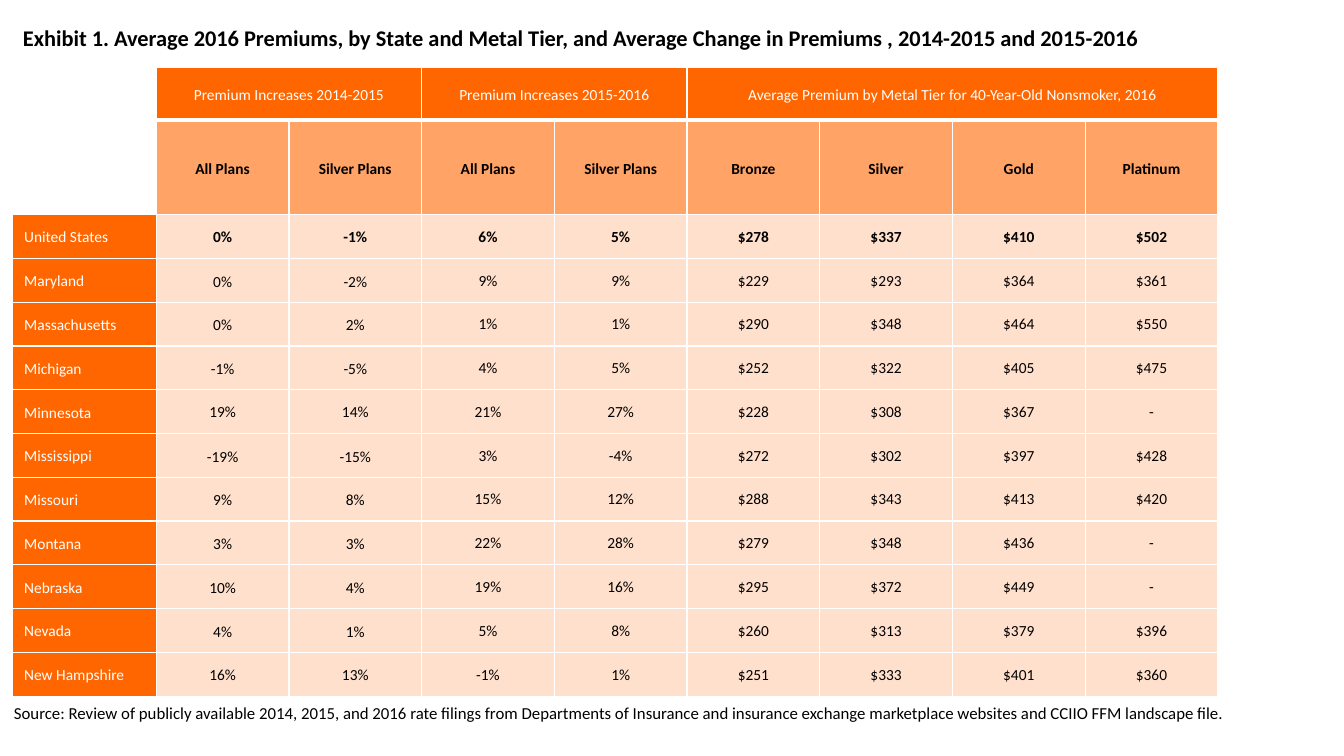
from lxml import etree
from pptx import Presentation
from pptx.dml.color import RGBColor
from pptx.enum.text import MSO_ANCHOR, PP_ALIGN
from pptx.oxml.ns import qn
from pptx.util import Inches, Pt

LEFT, CENTER = PP_ALIGN.LEFT, PP_ALIGN.CENTER
MIDDLE, TOP = MSO_ANCHOR.MIDDLE, MSO_ANCHOR.TOP
HEX = {"white": "FFFFFF", "black": "000000", "strong": "FF6600",
       "mid": "FFA366", "pale": "FFE0CC"}

GROUPS = [(1, 2, "Premium Increases 2014-2015"),
          (3, 4, "Premium Increases 2015-2016"),
          (5, 8, "Average Premium by Metal Tier for 40-Year-Old Nonsmoker, 2016")]
HEADS = ["All Plans", "Silver Plans"] * 2 + ["Bronze", "Silver", "Gold", "Platinum"]
STATES = [
    ("United States", "0% -1% 6% 5% $278 $337 $410 $502"),
    ("Maryland", "0% -2% 9% 9% $229 $293 $364 $361"),
    ("Massachusetts", "0% 2% 1% 1% $290 $348 $464 $550"),
    ("Michigan", "-1% -5% 4% 5% $252 $322 $405 $475"),
    ("Minnesota", "19% 14% 21% 27% $228 $308 $367 -"),
    ("Mississippi", "-19% -15% 3% -4% $272 $302 $397 $428"),
    ("Missouri", "9% 8% 15% 12% $288 $343 $413 $420"),
    ("Montana", "3% 3% 22% 28% $279 $348 $436 -"),
    ("Nebraska", "10% 4% 19% 16% $295 $372 $449 -"),
    ("Nevada", "4% 1% 5% 8% $260 $313 $379 $396"),
    ("New Hampshire", "16% 13% -1% 1% $251 $333 $401 $360"),
]
TIGHT = ("United States", "Minnesota")  # rows set in single line spacing


def write(frame, text, size=11, color="black", bold=False, align=CENTER,
          line=None, after=0):
    para = frame.paragraphs[0]
    para.alignment = align
    para.line_spacing = line
    para.space_after = Pt(after)
    run = para.add_run()
    run.text = text
    run.font.name = "Calibri"
    run.font.size = Pt(size)
    run.font.bold = bold
    run.font.color.rgb = RGBColor.from_string(HEX[color])


def pad(cell, side, top=0):
    cell.margin_left = cell.margin_right = Inches(side)
    cell.margin_top, cell.margin_bottom = Inches(top), 0
    cell.vertical_anchor = MIDDLE


deck = Presentation()
deck.slide_width, deck.slide_height = Inches(13.33), Inches(7.5)
slide = deck.slides.add_slide(deck.slide_layouts[6])

# Title and source line
for left, top, height, text, size, bold, anchor, line in [
    (0.13, 0.22, 0.34, "Exhibit 1. Average 2016 Premiums, by State and Metal Tier, "
     "and Average Change in Premiums , 2014-2015 and 2015-2016", 16, True, MIDDLE, 0.9),
    (0.04, 6.92, 0.5, "Source: Review of publicly available 2014, 2015, and 2016 rate "
     "filings from Departments of Insurance and insurance exchange marketplace "
     "websites and CCIIO FFM landscape file.", 12, False, TOP, None),
]:
    box = slide.shapes.add_textbox(Inches(left), Inches(top), Inches(13.07), Inches(height))
    box.text_frame.word_wrap = True
    box.text_frame.vertical_anchor = anchor
    write(box.text_frame, text, size=size, bold=bold, align=LEFT, line=line)

# Table grid: a name column and eight equal ones, two head rows and equal state rows
wide, high = Inches(11.96), Inches(6.24)
name, band, head = Inches(1.43), Inches(0.52), Inches(0.94)
cols, rows = len(HEADS) + 1, len(STATES) + 2
table = slide.shapes.add_table(rows, cols, Inches(0.12), Inches(0.67), wide, high).table
table.first_row = table.horz_banding = False
for c in range(cols):
    table.columns[c].width = (wide - name) // len(HEADS) if c else name
for r in range(rows):
    table.rows[r].height = (band, head)[r] if r < 2 else (high - band - head) // len(STATES)

# White rules and fills
for r in range(rows):
    for c in range(cols):
        cell = table.cell(r, c)
        props = cell._tc.get_or_add_tcPr()
        for side in "LRTB":
            width = 3 if r == 0 and side == "B" else 1
            rule = etree.SubElement(props, qn("a:ln" + side), w=str(Pt(width)))
            fill = etree.SubElement(rule, qn("a:solidFill"))
            etree.SubElement(fill, qn("a:srgbClr"), val=HEX["white"])
        if r < 2 and c == 0:
            cell.fill.background()
            continue
        tone = "strong" if r == 0 or c == 0 else "mid" if r == 1 else "pale"
        cell.fill.solid()
        cell.fill.fore_color.rgb = RGBColor.from_string(HEX[tone])

# Head rows
for first, last, text in GROUPS:
    cell = table.cell(0, first)
    cell.merge(table.cell(0, last))
    pad(cell, 0.15)
    write(cell.text_frame, text, color="white", line=1.15)
for c, text in enumerate(HEADS, 1):
    cell = table.cell(1, c)
    pad(cell, 0.15)
    write(cell.text_frame, text, bold=True, line=1.15)

# State rows
for r, (state, values) in enumerate(STATES, 2):
    cell = table.cell(r, 0)
    pad(cell, 0.12, 0.01)
    write(cell.text_frame, state, color="white", align=LEFT, line=1.07, after=8)
    for c, text in enumerate(values.split(), 1):
        cell = table.cell(r, c)
        loose = c < 3 and state not in TIGHT
        pad(cell, 0.07 if loose else 0.01, 0 if loose else 0.01)
        write(cell.text_frame, text, bold=r == 2, line=1.15 if loose else None,
              after=10 if loose and r < 9 else 0)

deck.save("out.pptx")
